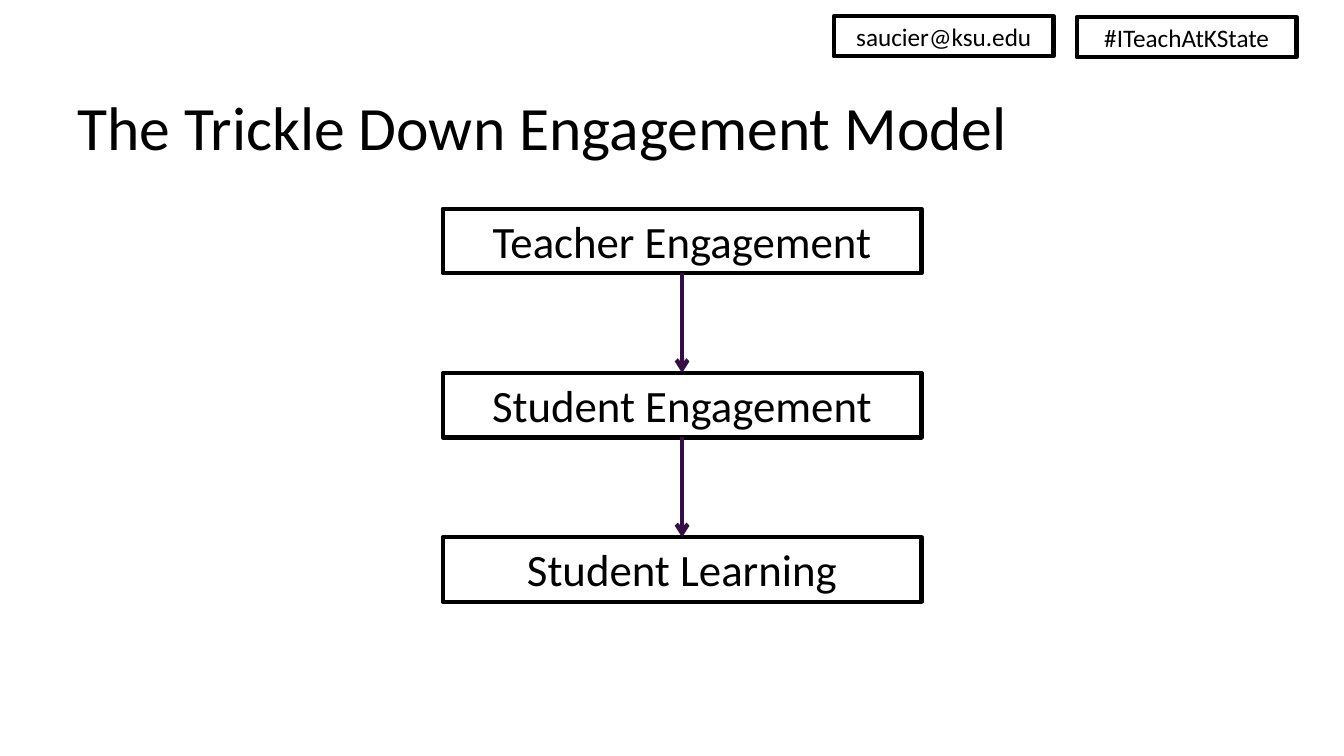
from lxml import etree
from pptx import Presentation
from pptx.dml.color import RGBColor
from pptx.enum.shapes import MSO_CONNECTOR, MSO_SHAPE
from pptx.enum.text import MSO_ANCHOR, MSO_AUTO_SIZE, PP_ALIGN
from pptx.oxml.ns import qn
from pptx.util import Inches, Pt

RECTANGLE = MSO_SHAPE.RECTANGLE
STRAIGHT = MSO_CONNECTOR.STRAIGHT
TOP, MIDDLE = MSO_ANCHOR.TOP, MSO_ANCHOR.MIDDLE
FIT_SHAPE = MSO_AUTO_SIZE.SHAPE_TO_FIT_TEXT
LEFT, CENTER = PP_ALIGN.LEFT, PP_ALIGN.CENTER

BLACK, WHITE, PURPLE = "000000", "FFFFFF", "330F42"
LINE_WIDTH = Pt(3)

STAGES = ["Teacher Engagement", "Student Engagement", "Student Learning"]
STAGE_LEFT, STAGE_TOP = 4.39, 2.07
STAGE_WIDTH, STAGE_HEIGHT = 4.75, 0.64
STAGE_STEP = 1.63
TAGS = [("saucier@ksu.edu", 8.27, 0.16), ("#ITeachAtKState", 10.68, 0.17)]
TAG_WIDTH, TAG_HEIGHT = 2.18, 0.4


def color(hex_value):
    return RGBColor.from_string(hex_value)


def set_format(target, values):
    for name, value in values.items():
        setattr(target, name, value)


def write_text(box, text, size, frame_format, para_format):
    frame = box.text_frame
    set_format(frame, {"word_wrap": True, **frame_format})
    para = frame.paragraphs[0]
    set_format(para, para_format)
    span = para.add_run()
    span.text = text
    set_format(span.font, {"name": "Calibri", "size": Pt(size)})
    span.font.color.rgb = color(BLACK)


def add_title(page, text):
    box = page.shapes.add_textbox(
        Inches(0.67), Inches(0.75), Inches(12.19), Inches(1.1))
    write_text(box, text, 44, {"vertical_anchor": MIDDLE},
               {"alignment": LEFT, "line_spacing": 0.9})


def add_framed_box(page, text, left, top, width, height, size, fill=None):
    box = page.shapes.add_shape(
        RECTANGLE, Inches(left), Inches(top), Inches(width), Inches(height))
    box.shadow.inherit = False
    if fill:
        box.fill.solid()
        box.fill.fore_color.rgb = color(fill)
    else:
        box.fill.background()
    box.line.color.rgb = color(BLACK)
    box.line.width = LINE_WIDTH
    write_text(box, text, size,
               {"vertical_anchor": TOP, "auto_size": FIT_SHAPE},
               {"alignment": CENTER})


def add_down_arrow(page, x, top, bottom):
    arrow = page.shapes.add_connector(
        STRAIGHT, Inches(x), Inches(top), Inches(x), Inches(bottom))
    arrow.line.color.rgb = color(PURPLE)
    arrow.line.width = LINE_WIDTH
    properties = arrow.element.spPr
    etree.SubElement(properties.find(qn("a:ln")), qn("a:tailEnd"), type="arrow")
    etree.SubElement(properties, qn("a:effectLst"))


def main():
    deck = Presentation()
    deck.slide_width, deck.slide_height = Inches(13.33), Inches(7.5)
    page = deck.slides.add_slide(deck.slide_layouts[6])

    add_title(page, "The Trickle Down Engagement Model")
    stage_tops = [STAGE_TOP + STAGE_STEP * i for i in range(len(STAGES))]
    for stage, top in zip(STAGES, stage_tops):
        add_framed_box(page, stage, STAGE_LEFT, top,
                       STAGE_WIDTH, STAGE_HEIGHT, 32)
    for top, next_top in zip(stage_tops, stage_tops[1:]):
        add_down_arrow(page, STAGE_LEFT + STAGE_WIDTH / 2,
                       top + STAGE_HEIGHT, next_top)
    for tag, left, top in TAGS:
        add_framed_box(page, tag, left, top, TAG_WIDTH, TAG_HEIGHT, 18, WHITE)

    deck.save("out.pptx")


if __name__ == "__main__":
    main()
